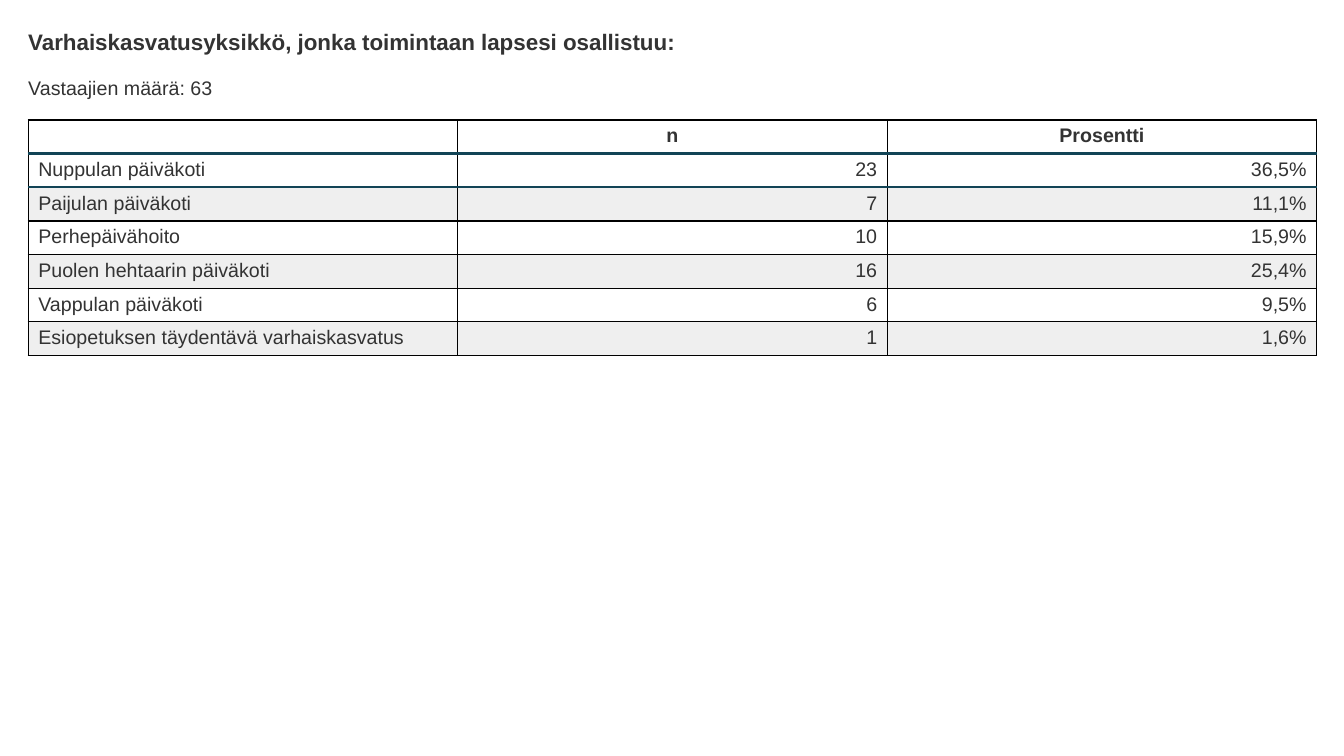
from dataclasses import dataclass

from lxml import etree
from pptx import Presentation
from pptx.dml.color import RGBColor
from pptx.enum.text import PP_ALIGN
from pptx.oxml.ns import qn
from pptx.util import Emu, Pt

LEFT, CENTER, RIGHT = PP_ALIGN.LEFT, PP_ALIGN.CENTER, PP_ALIGN.RIGHT
EMU_PER_PX = 9144
FONT = "Arial"
INK = RGBColor(0x33, 0x33, 0x33)
BLACK = RGBColor(0x00, 0x00, 0x00)
TEAL = RGBColor(0x12, 0x44, 0x56)
BAND = RGBColor(0xEF, 0xEF, 0xEF)
MARGIN, CONTENT_WIDTH = 28, 1278
TABLE_TOP, TABLE_HEIGHT = 119, 233
BODY_SIZE = 14


@dataclass(frozen=True)
class Heading:
    text: str
    top: int
    height: int
    size: int
    bold: bool


HEADINGS = [
    Heading("Varhaiskasvatusyksikkö, jonka toimintaan lapsesi osallistuu:", 28, 27, 16, True),
    Heading("Vastaajien määrä: 63", 75, 23, BODY_SIZE, False),
]
ROWS = [
    ("", "n", "Prosentti"),
    ("Nuppulan päiväkoti", "23", "36,5%"),
    ("Paijulan päiväkoti", "7", "11,1%"),
    ("Perhepäivähoito", "10", "15,9%"),
    ("Puolen hehtaarin päiväkoti", "16", "25,4%"),
    ("Vappulan päiväkoti", "6", "9,5%"),
    ("Esiopetuksen täydentävä varhaiskasvatus", "1", "1,6%"),
]


def px(n: int) -> Emu:
    """Convert px to EMU."""
    return Emu(n * EMU_PER_PX)


def add_run(p, text: str, size: int, bold: bool) -> None:
    """Add one styled run to a paragraph."""
    r = p.add_run()
    r.text = text
    r.font.name = FONT
    r.font.size = Pt(size)
    r.font.bold = bold
    r.font.color.rgb = INK


def add_heading(slide, heading: Heading) -> None:
    """Add a full-width line of text."""
    sp = slide.shapes.add_textbox(
        px(MARGIN), px(heading.top), px(CONTENT_WIDTH), px(heading.height))
    tf = sp.text_frame
    tf.word_wrap = True
    tf.margin_left = tf.margin_top = tf.margin_right = tf.margin_bottom = 0
    add_run(tf.paragraphs[0], heading.text, heading.size, heading.bold)


def add_border(cell, side: str, color: RGBColor, width: int) -> None:
    """Draw one solid side of a cell."""
    ln = etree.SubElement(cell._tc.get_or_add_tcPr(), qn(f"a:ln{side}"), w=str(Pt(width)))
    fill = etree.SubElement(ln, qn("a:solidFill"))
    etree.SubElement(fill, qn("a:srgbClr"), val=str(color))


def fill_cell(cell, text: str, row: int, col: int) -> None:
    """Write and style one table cell."""
    p = cell.text_frame.paragraphs[0]
    p.alignment = CENTER if row == 0 else RIGHT if col else LEFT
    if text:
        add_run(p, text, BODY_SIZE, row == 0)
    else:
        etree.SubElement(p._p, qn("a:endParaRPr"), sz=str(BODY_SIZE * 100))
    teal_sides = {0: "B", 1: "TB", 2: "T"}.get(row, "")
    for side in "LRTB":
        color, width = (TEAL, 2) if side in teal_sides else (BLACK, 1)
        add_border(cell, side, color, width)
    if row and row % 2 == 0:
        cell.fill.solid()
        cell.fill.fore_color.rgb = BAND
    else:
        cell.fill.background()


def add_results(slide) -> None:
    """Add the table of answers per unit."""
    frame = slide.shapes.add_table(
        len(ROWS), len(ROWS[0]), px(MARGIN), px(TABLE_TOP), px(CONTENT_WIDTH), px(TABLE_HEIGHT))
    table = frame.table
    table.first_row = table.horz_banding = False
    for row, values in enumerate(ROWS):
        for col, text in enumerate(values):
            fill_cell(table.cell(row, col), text, row, col)


def main() -> None:
    """Build and save the slide."""
    prs = Presentation()
    prs.slide_width, prs.slide_height = px(1333), px(750)
    slide = prs.slides.add_slide(prs.slide_layouts[6])
    for heading in HEADINGS:
        add_heading(slide, heading)
    add_results(slide)
    prs.save("out.pptx")


if __name__ == "__main__":
    main()
